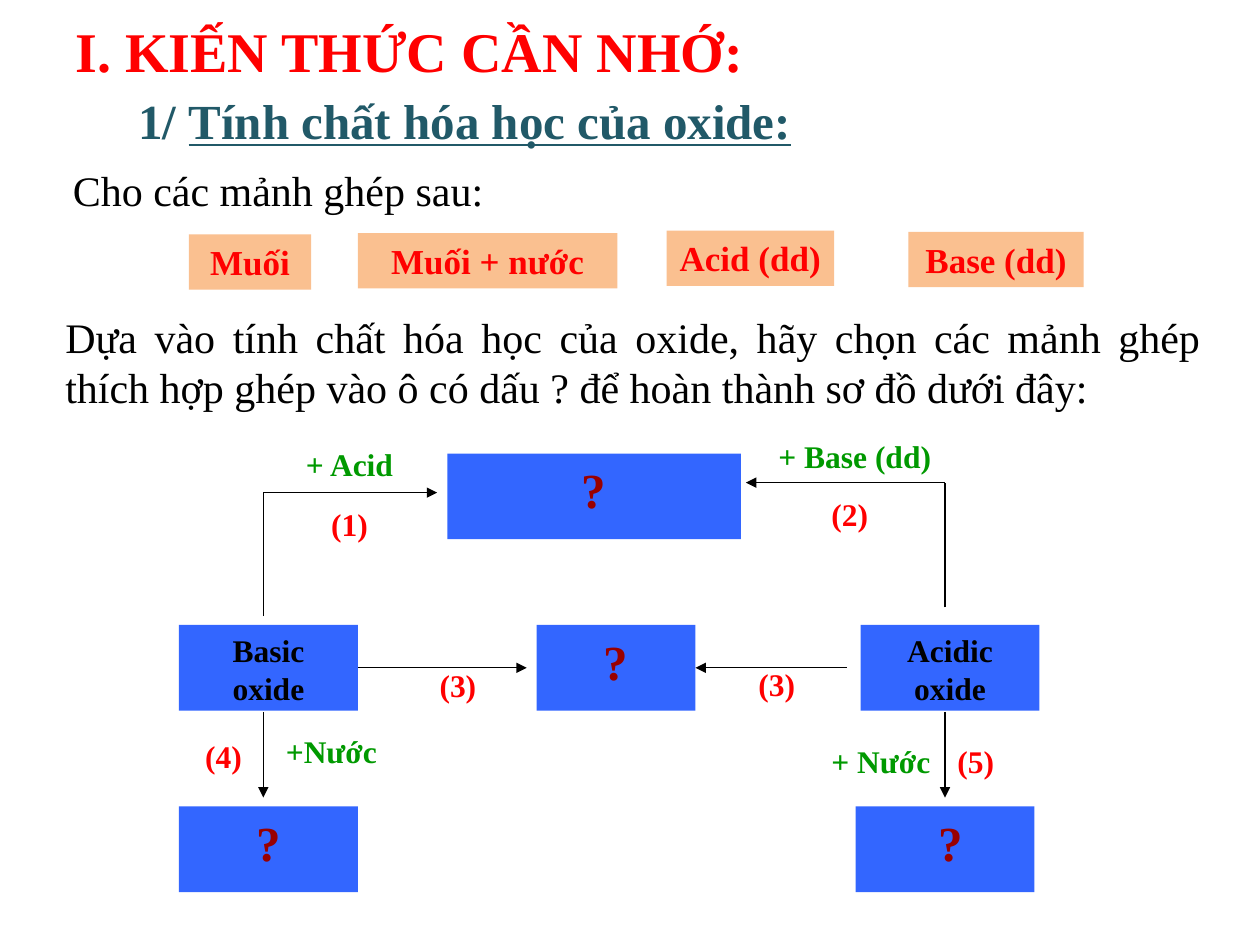
"""Build the slide on the chemical properties of oxides."""
import pptx
import pptx.dml.color
import pptx.enum.shapes
import pptx.enum.text
import pptx.oxml
import pptx.oxml.ns
import pptx.util

Inches = pptx.util.Inches
Align = pptx.enum.text.PP_ALIGN
Shapes = pptx.enum.shapes
COLORS = {
    "red": "FF0000", "teal": "215968", "black": "000000", "green": "009900",
    "dark red": "990000", "blue": "3366FF", "peach": "FAC090",
}


def rgb(name):
    return pptx.dml.color.RGBColor.from_string(COLORS[name])


def write(para, text, size=18, color="black", bold=True, underline=None, align=Align.LEFT):
    para.alignment = align
    span = para.add_run()
    span.text = text
    span.font.name = "Times New Roman"
    span.font.size = pptx.util.Pt(size)
    span.font.bold = bold
    span.font.underline = underline
    span.font.color.rgb = rgb(color)


deck = pptx.Presentation()
deck.slide_width, deck.slide_height = Inches(10), Inches(7.5)
page = deck.slides.add_slide(deck.slide_layouts[6])

piece = {"size": 20, "color": "red"}
blank = {"size": 28, "color": "dark red"}
rectangles = [
    ("salt piece", 1.5, 1.86, 0.97, 0.44, "peach", ["Muối"], piece),
    ("salt and water piece", 2.84, 1.85, 2.06, 0.44, "peach", ["Muối + nước"], piece),
    ("acid piece", 5.29, 1.83, 1.33, 0.44, "peach", ["Acid (dd)"], piece),
    ("base piece", 7.21, 1.84, 1.39, 0.44, "peach", ["Base (dd)"], piece),
    ("top blank", 3.55, 3.6, 2.33, 0.68, "blue", ["?"], blank),
    ("basic oxide", 1.42, 4.96, 1.42, 0.68, "blue", ["Basic", "oxide"], {}),
    ("middle blank", 4.26, 4.96, 1.26, 0.68, "blue", ["?"], blank),
    ("acidic oxide", 6.83, 4.96, 1.42, 0.68, "blue", ["Acidic oxide"], {}),
    ("left blank", 1.42, 6.4, 1.42, 0.68, "blue", ["?"], blank),
    ("right blank", 6.79, 6.4, 1.42, 0.68, "blue", [" ?"], blank),
]
boxes = {}
for role, left, top, width, height, fill, lines, style in rectangles:
    box = page.shapes.add_shape(
        Shapes.MSO_SHAPE.RECTANGLE, Inches(left), Inches(top), Inches(width), Inches(height))
    box.shadow.inherit = False
    box.fill.solid()
    box.fill.fore_color.rgb = rgb(fill)
    box.line.fill.background()
    frame = box.text_frame
    frame.word_wrap = fill == "blue"
    frame.vertical_anchor = pptx.enum.text.MSO_ANCHOR.TOP
    for index, line in enumerate(lines):
        para = frame.add_paragraph() if index else frame.paragraphs[0]
        write(para, line, align=Align.CENTER, **style)
    boxes[role] = box

basic_x, acidic_x, middle_y = 2.09, 7.5, 5.3
links = [
    (basic_x, 4.89, basic_x, 3.91, False, None, None),
    (basic_x, 3.91, 3.47, 3.91, True, None, None),
    (acidic_x, 4.82, acidic_x, 3.83, False, None, None),
    (acidic_x, 3.83, 5.92, 3.83, True, None, None),
    (2.84, middle_y, 4.18, middle_y, True, ("basic oxide", 3), None),
    (6.72, middle_y, 5.52, middle_y, True, None, ("middle blank", 3)),
    (basic_x, 5.65, basic_x, 6.33, True, None, None),
    (acidic_x, 5.65, acidic_x, 6.33, True, None, None),
]
for x1, y1, x2, y2, arrow, start, end in links:
    link = page.shapes.add_connector(
        Shapes.MSO_CONNECTOR.STRAIGHT, Inches(x1), Inches(y1), Inches(x2), Inches(y2))
    if start:
        link.begin_connect(boxes[start[0]], start[1])
    if end:
        link.end_connect(boxes[end[0]], end[1])
    link.line.color.rgb = rgb("black")
    link.line.width = pptx.util.Pt(0.75)
    properties = link._element.spPr
    if arrow:
        tail = pptx.oxml.parse_xml(
            f'<a:tailEnd {pptx.oxml.ns.nsdecls("a")} type="triangle"/>')
        properties.find(pptx.oxml.ns.qn("a:ln")).append(tail)
    properties.append(pptx.oxml.parse_xml(f'<a:effectLst {pptx.oxml.ns.nsdecls("a")}/>'))

heading = {"size": 28, "color": "teal"}
body = {"size": 24, "bold": False, "align": Align.JUSTIFY}
number = {"color": "red"}
reagent = {"color": "green"}
texts = [
    (0.5, 0.08, 6.5, 0.64, [("I. KIẾN THỨC CẦN NHỚ:", {"size": 32, "color": "red"})]),
    (1, 0.67, 6.17, 0.57, [("1/ ", heading),
                           ("Tính chất hóa học của oxide:", {**heading, "underline": True})]),
    (0.48, 1.26, 3.49, 0.5, [("Cho các mảnh ghép sau:", body)]),
    (0.42, 2.42, 9.21, 0.91, [(
        "Dựa vào tính chất hóa học của oxide, hãy chọn các mảnh ghép thích hợp "
        "ghép vào ô có dấu ? để hoàn thành sơ đồ dưới đây:", body)]),
    (2.53, 3.96, 0.55, 0.39, [("(1)", number)]),
    (6.5, 3.88, 0.55, 0.39, [("(2)", number)]),
    (3.39, 5.24, 0.55, 0.39, [("(3)", number)]),
    (5.92, 5.23, 0.55, 0.39, [("(3)", number)]),
    (1.53, 5.8, 0.55, 0.39, [("(4)", number)]),
    (7.5, 5.84, 0.55, 0.39, [("(5)", number)]),
    (2.33, 3.48, 1.02, 0.4, [("+ Acid", reagent)]),
    (6.08, 3.42, 1.64, 0.4, [("+ Base (dd)", reagent)]),
    (2.17, 5.76, 1.02, 0.39, [("+Nước", reagent)]),
    (6.5, 5.84, 1.02, 0.39, [("+ Nước", reagent)]),
]
for left, top, width, height, spans in texts:
    box = page.shapes.add_textbox(Inches(left), Inches(top), Inches(width), Inches(height))
    box.text_frame.word_wrap = True
    for text, style in spans:
        write(box.text_frame.paragraphs[0], text, **style)

deck.save("out.pptx")
